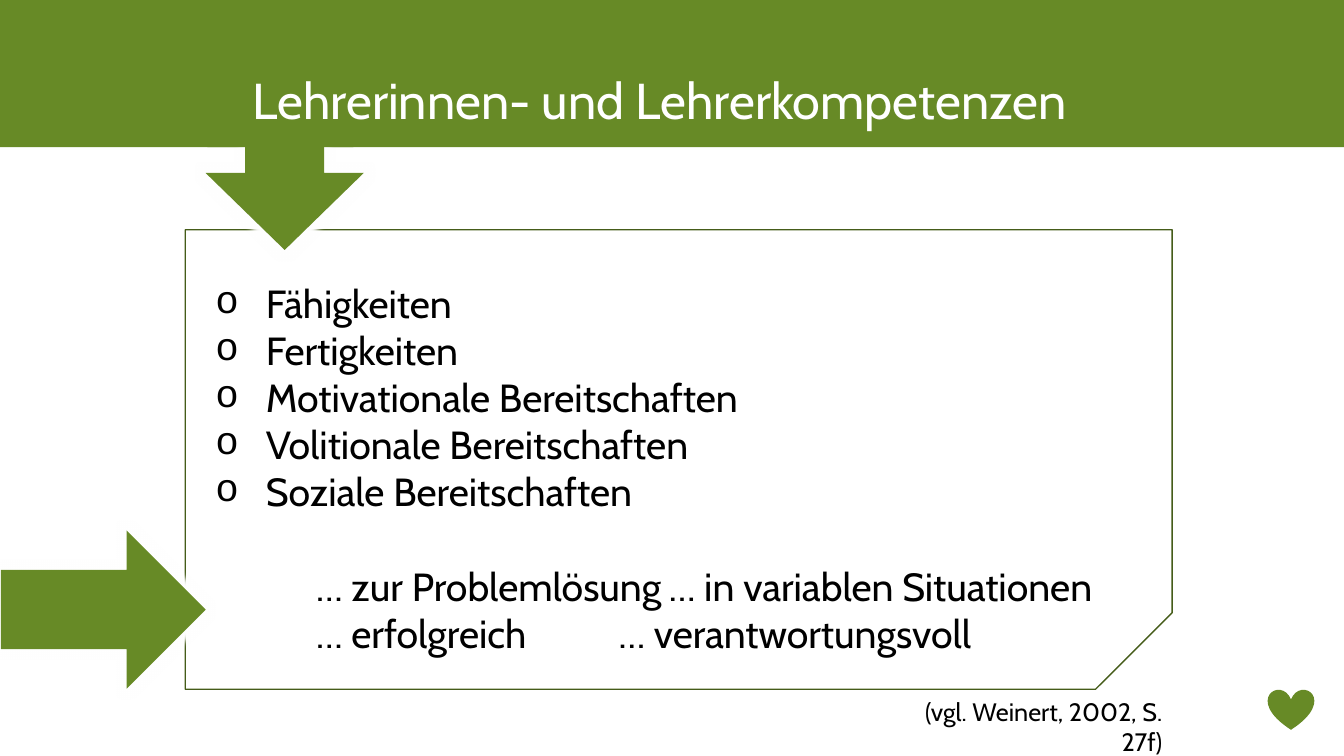
from lxml import etree
from pptx import Presentation
from pptx import util as u
from pptx.dml.color import RGBColor
from pptx.enum import shapes, text
from pptx.oxml import ns

GREEN = RGBColor(0x67, 0x8A, 0x26)
DARK_GREEN = RGBColor(0x45, 0x5C, 0x19)
WHITE = RGBColor(0xFF, 0xFF, 0xFF)
BLACK = RGBColor(0, 0, 0)
FONT = "Cabin"
SHAPE = shapes.MSO_SHAPE
ALIGN = text.PP_ALIGN

SKILLS = ["Fähigkeiten", "Fertigkeiten", "Motivationale Bereitschaften",
          "Volitionale Bereitschaften", "Soziale Bereitschaften"]
GOALS = ["… zur Problemlösung\t… in variablen Situationen",
         "… erfolgreich\t\t… verantwortungsvoll"]


def add_child(parent, tag, **attributes):
    return etree.SubElement(parent, ns.qn(tag), attributes)


def set_all(target, values):
    for name, value in values.items():
        setattr(target, name, value)


def add_figure(page, kind, place, fill=GREEN, line=None):
    figure = page.shapes.add_shape(kind, *map(u.Cm, place))
    figure.shadow.inherit = False
    if fill is None:
        figure.fill.background()
    else:
        figure.fill.solid()
        figure.fill.fore_color.rgb = fill
    if line is None:
        figure.line.fill.background()
    else:
        figure.line.color.rgb = line
        figure.line.width = u.Pt(1)
    return figure


def add_arrow(page, place, rotation=0, head=0.5):
    arrow = add_figure(page, SHAPE.DOWN_ARROW, place)
    arrow.rotation = rotation
    arrow.adjustments[1] = head
    # White halo that interrupts the frame line
    effects = arrow._element.spPr.find(ns.qn("a:effectLst"))
    glow = add_child(effects, "a:glow", rad=str(u.Pt(8)))
    add_child(glow, "a:srgbClr", val=str(WHITE))


def add_box(page, place, anchor=text.MSO_ANCHOR.TOP):
    box = page.shapes.add_textbox(*map(u.Cm, place))
    set_all(box.text_frame, {"word_wrap": True, "vertical_anchor": anchor})
    return box.text_frame


def add_para(frame, words, size, color=BLACK, **formats):
    first = frame.paragraphs[0]
    para = frame.add_paragraph() if first.runs else first
    set_all(para, formats)
    span = para.add_run()
    span.text = words
    set_all(span.font, {"name": FONT, "size": u.Pt(size)})
    span.font.color.rgb = color
    return para


def indent(para, left, hanging=0, bullet=None):
    props = para._p.get_or_add_pPr()
    props.set("marL", str(u.Cm(left)))
    props.set("indent", str(-u.Cm(hanging)))
    if bullet:
        add_child(props, "a:buFont", typeface="Courier New")
        add_child(props, "a:buChar", char=bullet)


def add_competences(page):
    frame = add_box(page, (5.18, 6.91, 26.8, 10.8))
    for skill in SKILLS:
        indent(add_para(frame, skill, 28), 1.27, 1.27, "o")
    for index, goal in enumerate(GOALS):
        gap = u.Pt(0 if index else 34)
        indent(add_para(frame, goal, 28, space_before=gap), 2.54)


def main():
    deck = Presentation()
    set_all(deck, {"slide_width": u.Cm(33.87), "slide_height": u.Cm(19.05)})
    page = deck.slides.add_slide(deck.slide_layouts[6])

    # Title band and frame
    add_figure(page, SHAPE.RECTANGLE, (0, 0, 33.87, 3.71))
    frame = add_figure(page, SHAPE.SNIP_1_RECTANGLE,
                       (4.67, 5.79, 24.87, 11.58), None, DARK_GREEN)
    frame._element.spPr.xfrm.set("flipV", "1")

    # Title and competences
    title = add_box(page, (1.7, 0, 29.85, 3.4), text.MSO_ANCHOR.BOTTOM)
    add_para(title, "Lehrerinnen- und Lehrerkompetenzen", 36, WHITE,
             alignment=ALIGN.CENTER)
    add_competences(page)

    # Arrows, the bridge from band to arrow, heart
    add_arrow(page, (0.61, 12.78, 3.99, 5.16), rotation=270)
    add_arrow(page, (5.18, 3.71, 3.99, 2.59), head=0.75)
    add_figure(page, SHAPE.RECTANGLE, (5.23, 3.1, 3.68, 0.61))
    add_figure(page, SHAPE.HEART, (31.95, 17.37, 1.17, 1.02))

    # Citation
    citation = add_box(page, (21.99, 17.42, 7.55, 1.02))
    add_para(citation, "(vgl. Weinert, 2002, S. 27f)", 18,
             alignment=ALIGN.RIGHT)

    deck.save("out.pptx")


if __name__ == "__main__":
    main()
